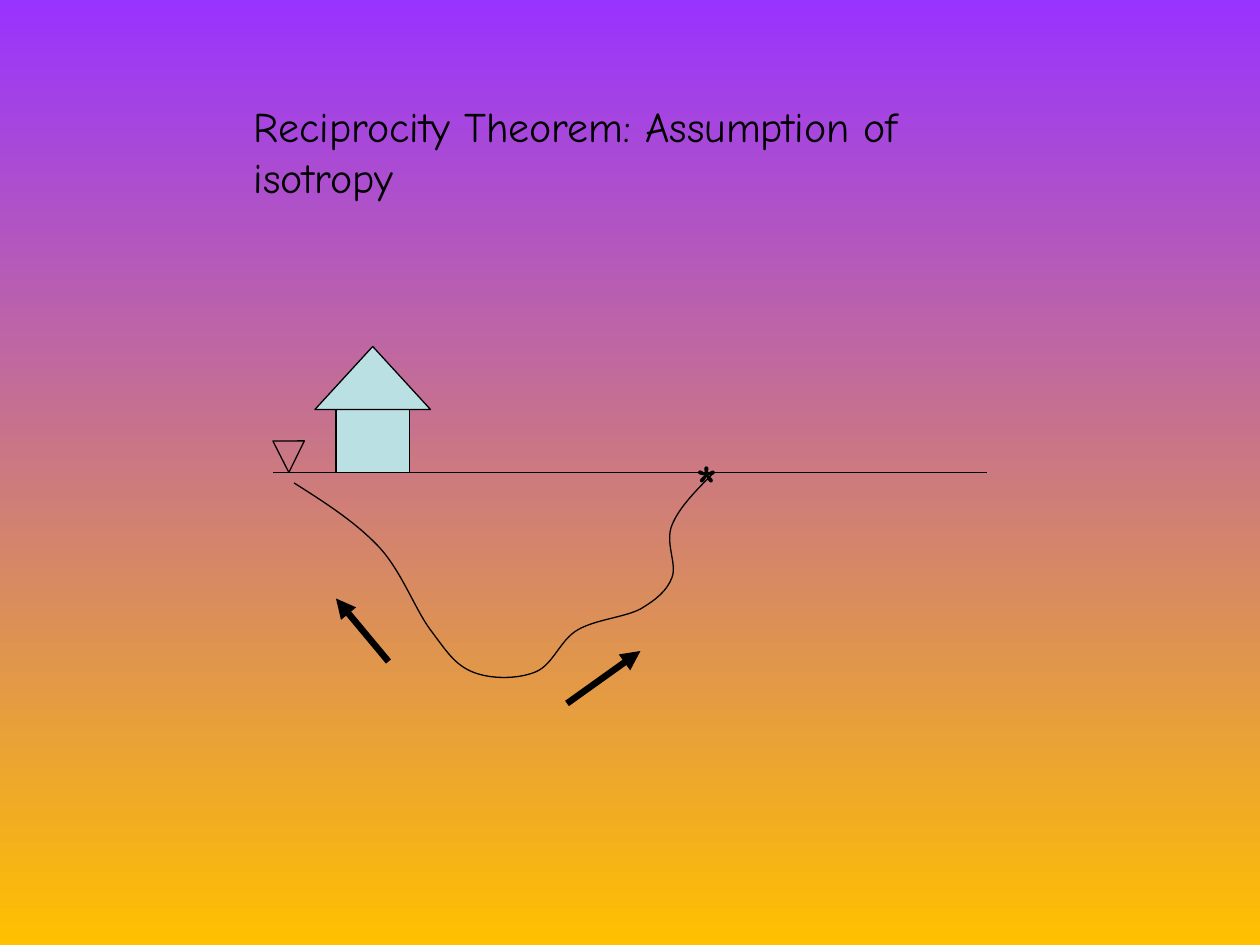
"""Draw the reciprocity theorem slide on a grid of 120 columns by 90 rows."""
import dataclasses
import typing

import lxml.etree
import pptx
import pptx.dml.color
import pptx.enum.shapes
import pptx.enum.text
import pptx.oxml.ns
import pptx.util

COLS, ROWS = 120, 90
HUES = {"sky": "9933FF", "earth": "FFC000", "house": "BBE0E3", "ink": "000000"}
KINDS = pptx.enum.shapes.MSO_SHAPE
Point = tuple[float, float]
Box = tuple[float, float, float, float]


@dataclasses.dataclass
class Note:
    """Text in a box, with its size in points."""
    text: str
    box: Box
    size: float


@dataclasses.dataclass
class Part:
    """A preset shape, hollow unless it has a fill."""
    kind: KINDS
    box: Box
    fill: typing.Optional[str] = None
    turn: float = 0


@dataclasses.dataclass
class Line:
    """A straight line, with or without an arrowhead."""
    start: Point
    end: Point
    width: float = 0.75
    head: bool = False


TITLE = Note("Reciprocity Theorem: Assumption of isotropy", (23, 9, 65, 10.8), 24)
STAR = Note("*", (65, 42, 11, 8.4), 36)
GROUND = Line((26, 45), (94, 45))
HOUSE = [
    Part(KINDS.RECTANGLE, (32, 37, 7, 8), "house"),
    Part(KINDS.ISOSCELES_TRIANGLE, (30, 33, 11, 6), "house"),
]
SENSOR = Part(KINDS.ISOSCELES_TRIANGLE, (26, 42, 3, 3), turn=179.7)
ARROWS = [
    Line((54, 67), (61, 62), 3.75, True),
    Line((37, 63), (32, 57), 3.75, True),
]
RAY = [
    (28, 46),
    (31, 47.9), (33.8, 49.7), (36, 52),
    (38.2, 54.3), (39.5, 58), (41, 60),
    (42.5, 62), (43.3, 63.3), (45, 64),
    (46.7, 64.7), (49.3, 64.7), (51, 64),
    (52.7, 63.3), (53.3, 61), (55, 60),
    (56.7, 59), (59.5, 58.8), (61, 58),
    (62.5, 57.1), (63.5, 56.3), (64, 55),
    (64.5, 53.7), (63.3, 51.7), (64, 50),
    (64.7, 48.3), (66.3, 46.7), (68, 45),
]

deck = pptx.Presentation()
deck.slide_width = pptx.util.Inches(10)
deck.slide_height = pptx.util.Inches(7.5)
slide = deck.slides.add_slide(deck.slide_layouts[6])


def place(*cells: float) -> list[int]:
    """Turn column and row pairs into slide lengths."""
    units = (deck.slide_width / COLS, deck.slide_height / ROWS)
    return [round(cell * units[i % 2]) for i, cell in enumerate(cells)]


def tint(name: str) -> pptx.dml.color.RGBColor:
    """Look up a colour by name."""
    return pptx.dml.color.RGBColor.from_string(HUES[name])


def style(item: typing.Any, looks: dict[str, typing.Any]) -> None:
    """Set each format value on an item."""
    for key, value in looks.items():
        setattr(item, key, value)


def ink(line: typing.Any, width: float = 0.75) -> None:
    """Give a line its colour and width."""
    line.color.rgb = tint("ink")
    line.width = pptx.util.Pt(width)


def paint() -> None:
    """Fill the background from sky to earth."""
    fill = slide.background.fill
    fill.gradient()
    fill.gradient_angle = 270
    for stop, name, share in zip(fill.gradient_stops, ("sky", "earth"), (0, 1)):
        stop.color.rgb = tint(name)
        stop.position = share


def write(note: Note) -> None:
    """Add a text box."""
    frame = slide.shapes.add_textbox(*place(*note.box)).text_frame
    style(frame, {
        "word_wrap": True,
        "auto_size": pptx.enum.text.MSO_AUTO_SIZE.SHAPE_TO_FIT_TEXT,
        "text": note.text,
    })
    font = frame.paragraphs[0].runs[0].font
    style(font, {"name": "Comic Neue", "size": pptx.util.Pt(note.size)})
    font.color.rgb = tint("ink")


def build(part: Part) -> None:
    """Add a preset shape."""
    shape = slide.shapes.add_shape(part.kind, *place(*part.box))
    shape.rotation = part.turn
    shape.shadow.inherit = False
    if part.fill:
        shape.fill.solid()
        shape.fill.fore_color.rgb = tint(part.fill)
    else:
        shape.fill.background()
    ink(shape.line)


def rule(line: Line) -> None:
    """Add a line or an arrow."""
    straight = pptx.enum.shapes.MSO_CONNECTOR.STRAIGHT
    link = slide.shapes.add_connector(straight, *place(*line.start, *line.end))
    ink(link.line, line.width)
    props = link.element.spPr
    if line.head:
        edge = props.find(pptx.oxml.ns.qn("a:ln"))
        lxml.etree.SubElement(edge, pptx.oxml.ns.qn("a:tailEnd"), type="triangle")
    lxml.etree.SubElement(props, pptx.oxml.ns.qn("a:effectLst"))


def trace(points: list[Point]) -> None:
    """Add an open curve, three points to each Bezier piece."""
    spots = [place(*point) for point in points]
    maker = slide.shapes.build_freeform(*spots[0])
    maker.add_line_segments(spots[1:], close=False)
    shape = maker.convert_to_shape()
    shape.shadow.inherit = False
    shape.fill.background()
    ink(shape.line)
    steps = list(shape.element.iter(pptx.oxml.ns.qn("a:lnTo")))
    for i in range(0, len(steps), 3):
        trio = steps[i:i + 3]
        bend = lxml.etree.SubElement(trio[0].getparent(), pptx.oxml.ns.qn("a:cubicBezTo"))
        for step in trio:
            bend.append(step[0])
            step.getparent().remove(step)


def main() -> None:
    """Build the slide from back to front."""
    paint()
    write(TITLE)
    rule(GROUND)
    for part in HOUSE:
        build(part)
    write(STAR)
    build(SENSOR)
    trace(RAY)
    for arrow in ARROWS:
        rule(arrow)
    deck.save("out.pptx")


if __name__ == "__main__":
    main()
